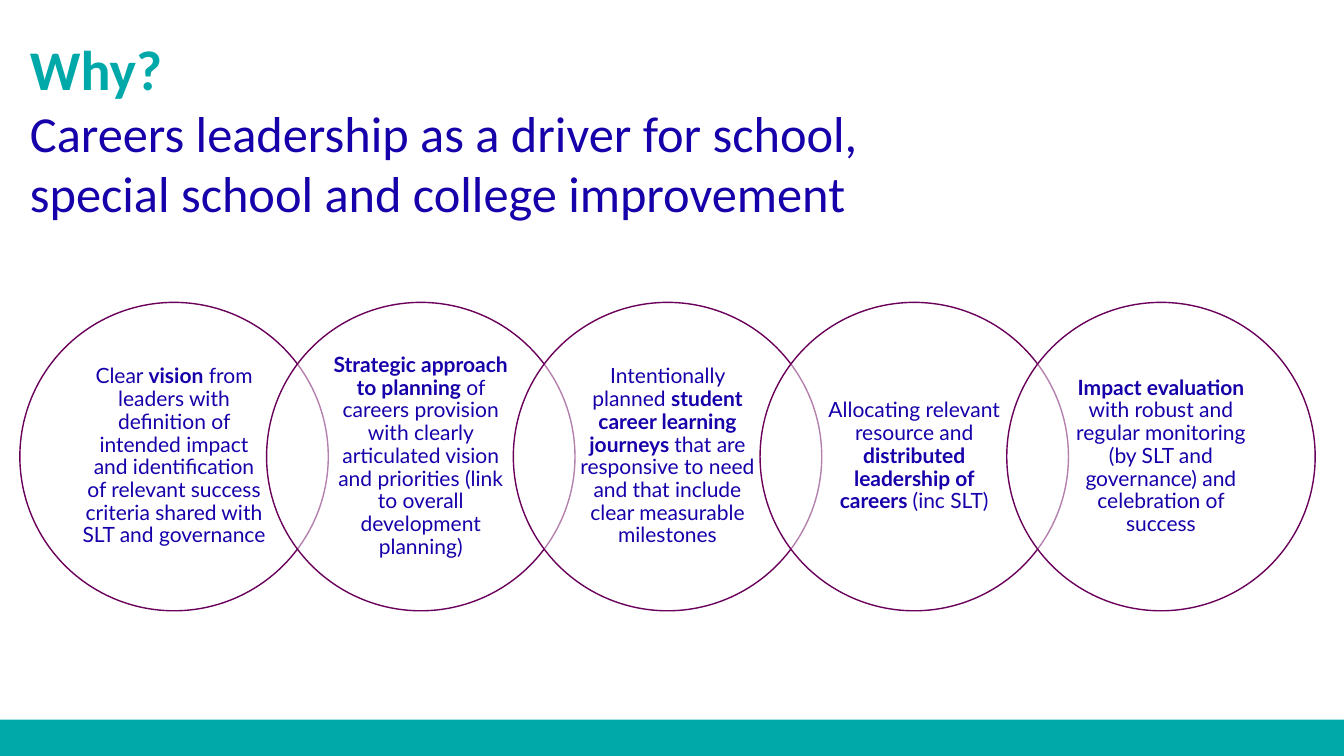
from lxml import etree
from pptx import Presentation
from pptx import util as u
from pptx.dml.color import RGBColor
from pptx.enum import shapes, text
from pptx.oxml.ns import qn

TEAL, NAVY, PLUM, WHITE = "00A9A9", "1500AA", "6A005B", "FFFFFF"
SLIDE_WIDTH, SLIDE_HEIGHT = 960, 540
BAND_HEIGHT = 26
CIRCLE_LEFT, CIRCLE_TOP, DIAMETER = 14.2, 216, 220.3
PITCH = DIAMETER * 0.8

TITLE = [
    ("Why?", 40, TEAL, True),
    ("Careers leadership as a driver for school, "
     "special school and college improvement", 36, NAVY, False),
]
DRIVERS = [
    [("Clear ", False), ("vision", True),
     (" from leaders with definition of intended impact and identification "
      "of relevant success criteria shared with SLT and governance", False)],
    [("Strategic approach to planning ", True),
     ("of careers provision with clearly articulated vision and priorities "
      "(link to overall development planning)", False)],
    [("Intentionally planned ", False), ("student career learning journeys ", True),
     ("that are responsive to need and that include clear measurable milestones", False)],
    [("Allocating relevant resource and ", False),
     ("distributed leadership of careers ", True), ("(inc SLT)", False)],
    [("Impact evaluation ", True),
     ("with robust and regular monitoring (by SLT and governance) "
      "and celebration of success", False)],
]


def colour(value):
    return RGBColor.from_string(value)


class SlideBuilder:
    title_font = "Calibri"
    body_font = "Lato"
    body_size = 15

    def __init__(self, page):
        self.page = page

    def style(self, paragraph, font, size, ink):
        paragraph.font.name = font
        paragraph.font.size = u.Pt(size)
        paragraph.font.color.rgb = colour(ink)

    def shape(self, kind, left, top, width, height, fill):
        shape = self.page.shapes.add_shape(
            kind, u.Pt(left), u.Pt(top), u.Pt(width), u.Pt(height))
        shape.shadow.inherit = False
        shape.fill.solid()
        shape.fill.fore_color.rgb = colour(fill)
        return shape

    def title(self, lines, left, top, width, height):
        box = self.page.shapes.title
        box.left, box.top = u.Pt(left), u.Pt(top)
        box.width, box.height = u.Pt(width), u.Pt(height)
        frame = box.text_frame
        frame.word_wrap = True
        frame.auto_size = text.MSO_AUTO_SIZE.NONE
        frame.vertical_anchor = text.MSO_ANCHOR.TOP
        frame.text = "\n".join(line[0] for line in lines)
        for paragraph, (_, size, ink, bold) in zip(frame.paragraphs, lines):
            paragraph.alignment = text.PP_ALIGN.LEFT
            self.style(paragraph, self.title_font, size, ink)
            paragraph.font.bold = bold

    def band(self, left, top, width, height, fill):
        band = self.shape(shapes.MSO_SHAPE.RECTANGLE, left, top, width, height, fill)
        band.line.fill.background()

    def circle(self, spans, left, top, diameter):
        circle = self.shape(shapes.MSO_SHAPE.OVAL, left, top, diameter, diameter, WHITE)
        fill = circle.fill._xPr.find(qn("a:solidFill"))
        etree.SubElement(fill[0], qn("a:alpha"), val="50000")
        circle.line.color.rgb = colour(PLUM)
        circle.line.width = u.Pt(1)
        frame = circle.text_frame
        frame.word_wrap = True
        frame.vertical_anchor = text.MSO_ANCHOR.MIDDLE
        frame.margin_left = frame.margin_right = u.Pt(12.2)
        frame.margin_top = frame.margin_bottom = u.Pt(1.5)
        para = frame.paragraphs[0]
        para.alignment = text.PP_ALIGN.CENTER
        para.line_spacing = 0.9
        self.style(para, self.body_font, self.body_size, NAVY)
        for words, bold in spans:
            span = para.add_run()
            span.text = words
            span.font.bold = bold


def main():
    deck = Presentation()
    deck.slide_width, deck.slide_height = u.Pt(SLIDE_WIDTH), u.Pt(SLIDE_HEIGHT)
    builder = SlideBuilder(deck.slides.add_slide(deck.slide_layouts[5]))
    builder.band(0, SLIDE_HEIGHT - BAND_HEIGHT, SLIDE_WIDTH, BAND_HEIGHT, TEAL)
    builder.title(TITLE, 14.2, 21, 702, 213)
    for index, spans in enumerate(DRIVERS):
        builder.circle(spans, CIRCLE_LEFT + index * PITCH, CIRCLE_TOP, DIAMETER)
    deck.save("out.pptx")


if __name__ == "__main__":
    main()
